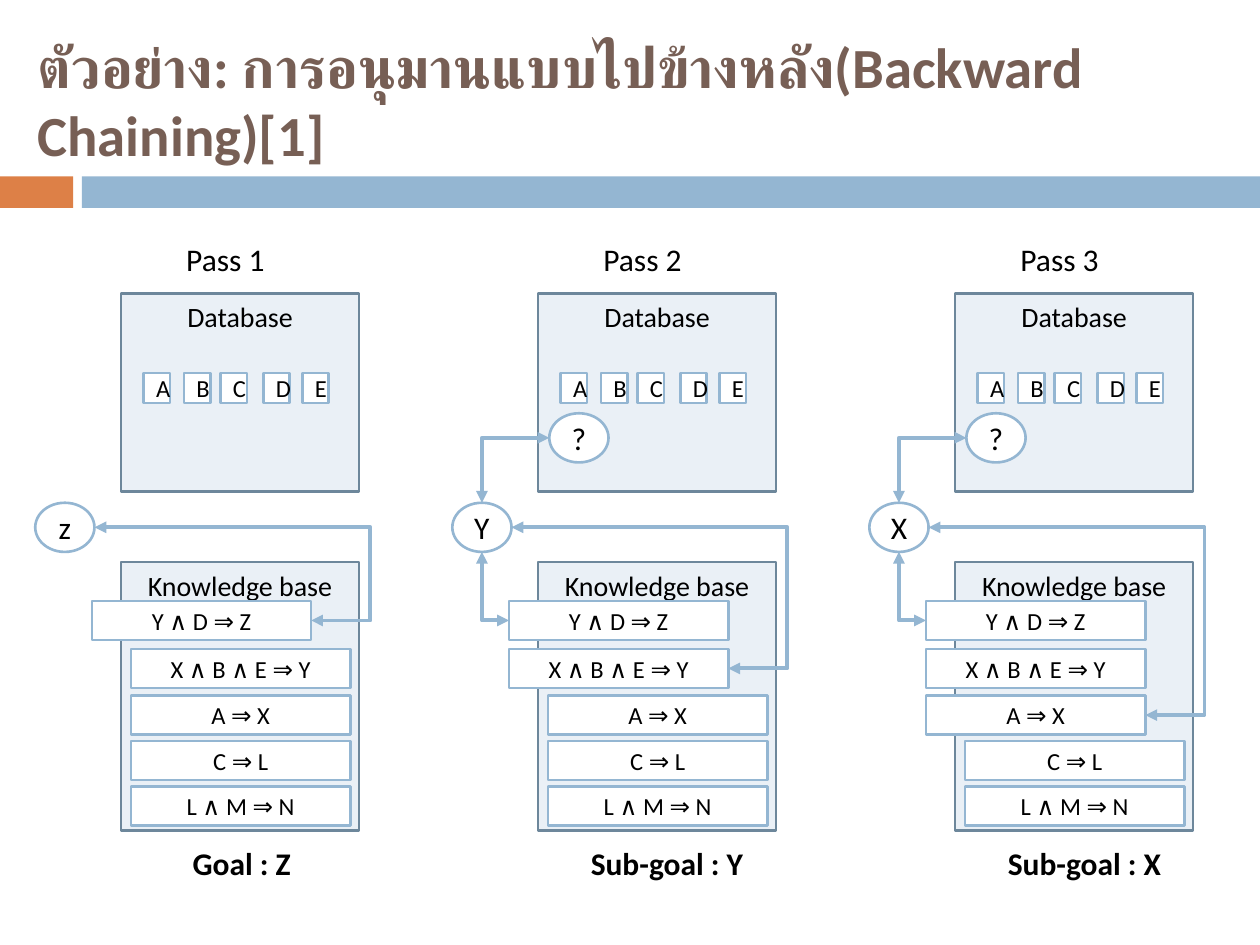
from dataclasses import dataclass

from lxml import etree
from pptx import Presentation
from pptx import util as u
from pptx.dml.color import RGBColor
from pptx.enum import shapes, text
from pptx.oxml.ns import qn

COLORS = {
    "accent": "DD8047", "blue": "94B6D2", "panel": "EAF0F6", "edge": "6D879B",
    "title": "775F55", "ink": "000000", "white": "FFFFFF",
}
FONT = "Calibri"
CELL = u.Inches(0.1)  # the slide is a grid of 100 columns by 75 rows
COLUMNS, ROWS = 100, 75
RECT, OVAL = shapes.MSO_SHAPE.RECTANGLE, shapes.MSO_SHAPE.OVAL

FIRST_COLUMN, PASS_STEP = 9.6, 33.1
PANEL_WIDTH = 18.9
FACTS = {"A": 1.8, "B": 5, "C": 7.9, "D": 11.3, "E": 14.4}
RULES = {
    "Y ∧ D ⇒ Z": 47.7, "X ∧ B ∧ E ⇒ Y": 51.5, "A ⇒ X": 55.2,
    "C ⇒ L": 58.8, "L ∧ M ⇒ N": 62.4,
}
RULE_WIDTH, RULE_HEIGHT = 17.4, 3.1
USED_RULE, UNUSED_RULE = -2.3, 0.8  # offsets from the left edge of the panel
LOOP = 19.8
GOAL_WIDTH, GOAL_HEIGHT, GOAL_TOP = 4.7, 3.9, 39.9
ASK_OFFSET, ASK_TOP = 0.9, 32.8


@dataclass(frozen=True)
class Area:
    """A rectangle in grid cells."""
    left: float
    top: float
    width: float
    height: float

    def lengths(self) -> list[int]:
        return [round(n * CELL) for n in (self.left, self.top, self.width, self.height)]


@dataclass(frozen=True)
class Point:
    column: float
    row: float


@dataclass(frozen=True)
class Pass:
    name: str
    goal: str
    caption: str
    caption_offset: float
    caption_width: float


PASSES = [
    Pass("Pass 1", "z", "Goal : Z", 4.7, 10.5),
    Pass("Pass 2", "Y", "Sub-goal : Y", 3.2, 14.8),
    Pass("Pass 3", "X", "Sub-goal : X", 3.2, 14.9),
]


def rgb(name: str) -> RGBColor:
    return RGBColor.from_string(COLORS[name])


def write(box, words: str, size: float, color="ink", bold=False,
          align=text.PP_ALIGN.CENTER, **frame_format) -> None:
    frame = box.text_frame
    for name, value in frame_format.items():
        setattr(frame, name, value)
    para = frame.paragraphs[0]
    para.alignment = align
    span = para.add_run()
    span.text = words
    font_format = {"name": FONT, "size": u.Pt(size), "bold": bold}
    for name, value in font_format.items():
        setattr(span.font, name, value)
    span.font.color.rgb = rgb(color)


def draw_shape(page, kind, area: Area, fill="white", line="blue"):
    box = page.shapes.add_shape(kind, *area.lengths())
    box.shadow.inherit = False
    box.fill.solid()
    box.fill.fore_color.rgb = rgb(fill)
    if line:
        box.line.color.rgb = rgb(line)
        box.line.width = u.Pt(1.5)
    else:
        box.line.fill.background()
    return box


def draw_node(page, kind, area: Area, words: str, size: float) -> None:
    write(draw_shape(page, kind, area), words, size,
          vertical_anchor=text.MSO_ANCHOR.MIDDLE)


def draw_panel(page, area: Area, words: str) -> None:
    write(draw_shape(page, RECT, area, "panel", "edge"), words, 16,
          vertical_anchor=text.MSO_ANCHOR.TOP)


def draw_label(page, area: Area, words: str, bold=False) -> None:
    write(page.shapes.add_textbox(*area.lengths()), words, 18, bold=bold,
          align=text.PP_ALIGN.LEFT, word_wrap=False)


def draw_link(page, start: Point, end: Point, elbow: float | None = None) -> None:
    """Two-headed arrow: one corner, or two corners at the column `elbow`."""
    ends = [round(n * CELL) for n in (start.column, start.row, end.column, end.row)]
    link = page.shapes.add_connector(shapes.MSO_CONNECTOR.ELBOW, *ends)
    link.line.color.rgb = rgb("blue")
    link.line.width = u.Pt(2.25)
    properties = link._element.spPr
    geometry = properties.find(qn("a:prstGeom"))
    if elbow is None:
        geometry.set("prst", "bentConnector2")
    else:
        share = (elbow - start.column) / (end.column - start.column)
        etree.SubElement(geometry.find(qn("a:avLst")), qn("a:gd"),
                         name="adj1", fmla=f"val {round(share * 100000)}")
    for tag in ("a:headEnd", "a:tailEnd"):
        etree.SubElement(properties.find(qn("a:ln")), qn(tag), type="triangle")
    etree.SubElement(properties, qn("a:effectLst"))


def draw_header(page) -> None:
    draw_shape(page, RECT, Area(0, 14, 5.8, 2.5), "accent", None)
    draw_shape(page, RECT, Area(6.5, 14, COLUMNS - 6.5, 2.5), "blue", None)
    title = page.shapes.add_textbox(*Area(2, 2.5, 96.9, 10.8).lengths())
    write(title, "ตัวอย่าง: การอนุมานแบบไปข้างหลัง(Backward Chaining)[1]", 32.4,
          "title", True, text.PP_ALIGN.LEFT, word_wrap=True,
          vertical_anchor=text.MSO_ANCHOR.MIDDLE)


def draw_pass(page, index: int, step: Pass) -> None:
    left = FIRST_COLUMN + index * PASS_STEP
    draw_label(page, Area(left + 4.2, 18.6, 8.3, 4), step.name)
    draw_panel(page, Area(left, 23.3, PANEL_WIDTH, 15.7), "Database")
    draw_panel(page, Area(left, 44.6, PANEL_WIDTH, 21.3), "Knowledge base")
    for fact, offset in FACTS.items():
        draw_node(page, RECT, Area(left + offset, 29.6, 2.1, 2.4), fact, 14)
    for number, (rule, top) in enumerate(RULES.items()):
        offset = USED_RULE if number <= index else UNUSED_RULE
        draw_node(page, RECT, Area(left + offset, top, RULE_WIDTH, RULE_HEIGHT), rule, 14)
    draw_label(page, Area(left + step.caption_offset, 66.5, step.caption_width, 4),
               step.caption, bold=True)

    goal_left = left - 6.8
    goal_center = goal_left + GOAL_WIDTH / 2
    rule_rows = [top + RULE_HEIGHT / 2 for top in RULES.values()]
    draw_node(page, OVAL, Area(goal_left, GOAL_TOP, GOAL_WIDTH, GOAL_HEIGHT), step.goal, 18)
    draw_link(page, Point(goal_left + GOAL_WIDTH, GOAL_TOP + GOAL_HEIGHT / 2),
              Point(left + USED_RULE + RULE_WIDTH, rule_rows[index]), left + LOOP)
    if index:
        ask_left = left + ASK_OFFSET
        draw_link(page, Point(left + USED_RULE, rule_rows[0]),
                  Point(goal_center, GOAL_TOP + GOAL_HEIGHT))
        draw_node(page, OVAL, Area(ask_left, ASK_TOP, GOAL_WIDTH, GOAL_HEIGHT), "?", 18)
        draw_link(page, Point(ask_left, ASK_TOP + GOAL_HEIGHT / 2),
                  Point(goal_center, GOAL_TOP))


def main() -> None:
    deck = Presentation()
    deck.slide_width, deck.slide_height = COLUMNS * CELL, ROWS * CELL
    page = deck.slides.add_slide(deck.slide_layouts[6])
    draw_header(page)
    for index, step in enumerate(PASSES):
        draw_pass(page, index, step)
    deck.save("out.pptx")


if __name__ == "__main__":
    main()
